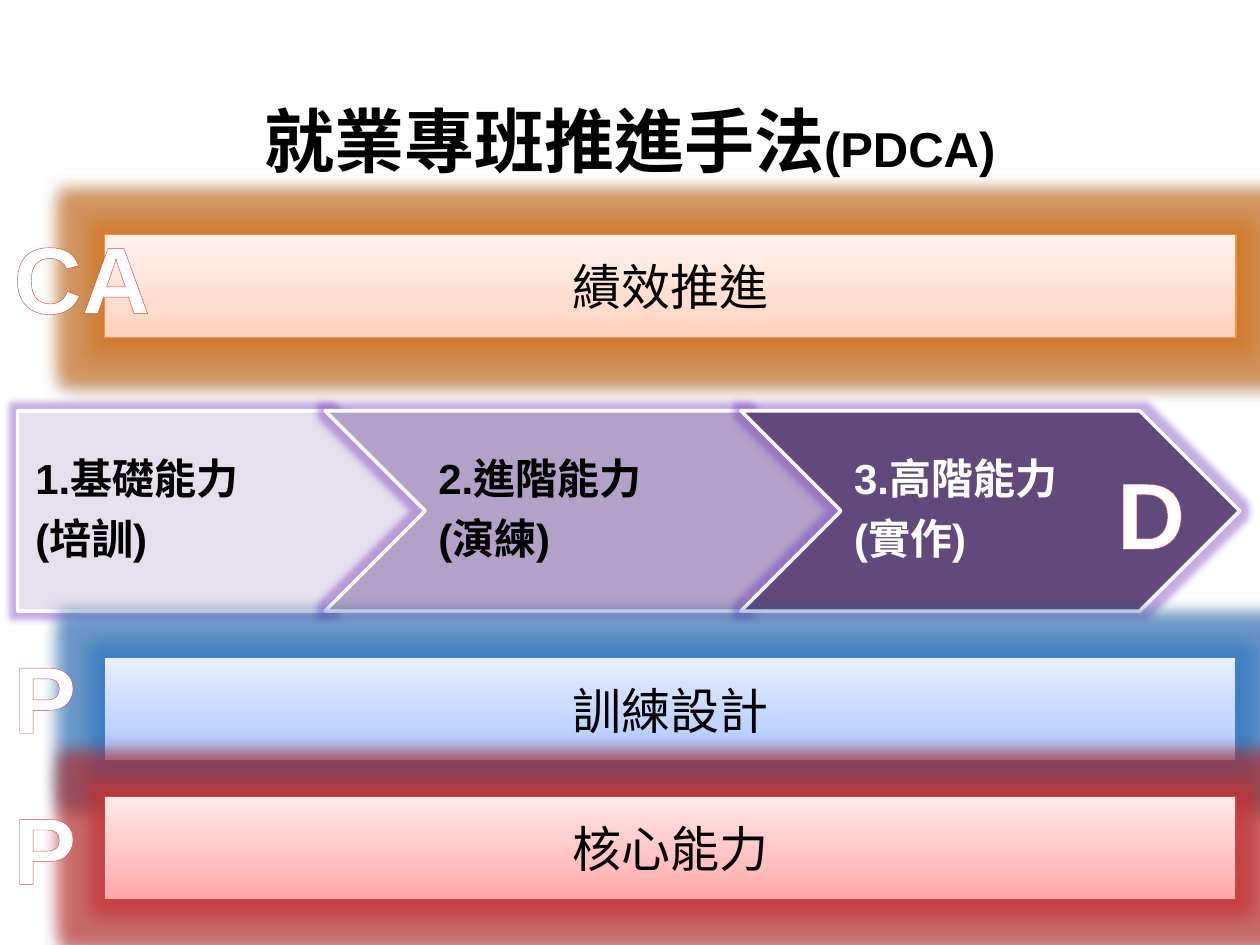
from dataclasses import dataclass

from lxml import etree
from pptx import Presentation
from pptx.dml.color import RGBColor
from pptx.enum.lang import MSO_LANGUAGE_ID
from pptx.enum.shapes import MSO_SHAPE
from pptx.enum.text import MSO_ANCHOR, MSO_AUTO_SIZE, PP_ALIGN
from pptx.oxml import parse_xml
from pptx.oxml.ns import nsdecls, qn
from pptx.util import Inches, Pt

RECT, PENTAGON, CHEVRON = MSO_SHAPE.RECTANGLE, MSO_SHAPE.PENTAGON, MSO_SHAPE.CHEVRON
MIDDLE, CENTER, LEFT = MSO_ANCHOR.MIDDLE, PP_ALIGN.CENTER, PP_ALIGN.LEFT
FIT, NO_FIT = MSO_AUTO_SIZE.SHAPE_TO_FIT_TEXT, MSO_AUTO_SIZE.NONE
ZH_TW = MSO_LANGUAGE_ID.TRADITIONAL_CHINESE
BLACK, WHITE = "000000", "FFFFFF"
STEP_TOP, STEP_H = 3.26, 1.59


@dataclass
class Step:
    shape: MSO_SHAPE
    left: float
    width: float
    text_left: float
    text_width: float
    inset: float
    fill: str
    color: str
    lines: tuple[str, str]


@dataclass
class Bar:
    top: float
    text: str
    stops: tuple[str, str, str]
    line: str
    glow: str


@dataclass
class Letter:
    text: str
    left: float
    top: float
    width: float


STEPS = [
    Step(PENTAGON, 0.14, 3.24, 0.14, 2.84, 0.14, "E6E0EC", BLACK, ("1.基礎能力", "(培訓)")),
    Step(CHEVRON, 2.58, 4.11, 3.38, 2.52, 0.1, "B3A2C7", BLACK, ("2.進階能力", "(演練)")),
    Step(CHEVRON, 5.88, 3.96, 6.68, 2.38, 0.1, "604A7B", WHITE, ("3.高階能力", "(實作)")),
]
BARS = [
    Bar(5.22, "訓練設計", ("A4C4FF", "BFD4FF", "E6EEFF"), "4B7EBC", "2A78C8"),
    Bar(6.32, "核心能力", ("FFA6A5", "FFC0BF", "FFE7E7"), "BF4C48", "CC3030"),
    Bar(1.86, "績效推進", ("FFD2BD", "FFDED0", "FFF2ED"), "F69240", "D9751A"),
]
LETTERS = [
    Letter("P", 0, 6.22, 0.71),
    Letter("P", 0, 5.02, 0.71),
    Letter("D", 8.76, 3.56, 0.75),
    Letter("CA", 0, 1.69, 1.3),
]


def rgb(value: str) -> RGBColor:
    return RGBColor.from_string(value)


def add_run(p, text: str, size: float, color: str, bold: bool = False):
    r = p.add_run()
    r.text = text
    r.font.name = "Arial"
    r.font.size = Pt(size)
    r.font.bold = bold
    r.font.color.rgb = rgb(color)
    r.font.language_id = ZH_TW
    return r


def add_effect(sp, tag: str, color: str, alpha: int, **attrs) -> None:
    """Append an effect to the shape's emptied effect list."""
    effects = sp._element.spPr.find(qn("a:effectLst"))
    effect = etree.SubElement(effects, qn(tag), {k: str(v) for k, v in attrs.items()})
    clr = etree.SubElement(effect, qn("a:srgbClr"), val=color)
    etree.SubElement(clr, qn("a:alpha"), val=str(alpha * 1000))


def add_outlined_shape(s, kind, left: float, top: float, width: float, height: float,
                       line: str, line_width: float):
    sp = s.shapes.add_shape(kind, Inches(left), Inches(top), Inches(width), Inches(height))
    sp.shadow.inherit = False
    sp.line.color.rgb = rgb(line)
    sp.line.width = Pt(line_width)
    return sp


def add_step(s, step: Step) -> None:
    sp = add_outlined_shape(s, step.shape, step.left, STEP_TOP, step.width, STEP_H, WHITE, 2)
    sp.fill.solid()
    sp.fill.fore_color.rgb = rgb(step.fill)
    add_effect(sp, "a:glow", "7030C0", 40, rad=Pt(8))

    tf = s.shapes.add_textbox(Inches(step.text_left), Inches(STEP_TOP),
                              Inches(step.text_width), Inches(STEP_H)).text_frame
    tf.word_wrap = True
    tf.vertical_anchor = MIDDLE
    tf.margin_left, tf.margin_right = Inches(step.inset), Inches(0.04)
    tf.margin_top = tf.margin_bottom = Inches(0.07)
    for i, text in enumerate(step.lines):
        p = tf.add_paragraph() if i else tf.paragraphs[0]
        p.alignment = LEFT
        p.line_spacing = 0.9
        p.space_after = Pt(8.4)
        add_run(p, text, 24, step.color, True)


def add_bar(s, bar: Bar) -> None:
    sp = add_outlined_shape(s, RECT, 0.83, bar.top, 8.98, 0.82, bar.line, 0.75)
    stops = "".join(f'<a:gs pos="{pos * 1000}"><a:srgbClr val="{color}"/></a:gs>'
                    for pos, color in zip((0, 35, 100), bar.stops))
    fill = parse_xml(f'<a:gradFill {nsdecls("a")} rotWithShape="1"><a:gsLst>{stops}</a:gsLst>'
                     '<a:lin ang="16200000" scaled="1"/></a:gradFill>')
    sp._element.spPr.find(qn("a:prstGeom")).addnext(fill)
    add_effect(sp, "a:glow", bar.glow, 60, rad=Pt(18))
    add_effect(sp, "a:outerShdw", BLACK, 38, blurRad=Pt(3.1), dist=Pt(1.6),
               dir=5400000, rotWithShape=0)
    tf = sp.text_frame
    tf.vertical_anchor = MIDDLE
    p = tf.paragraphs[0]
    p.alignment = CENTER
    add_run(p, bar.text, 28, BLACK)


def add_letter(s, letter: Letter) -> None:
    tf = s.shapes.add_textbox(Inches(letter.left), Inches(letter.top),
                              Inches(letter.width), Inches(1.01)).text_frame
    tf.word_wrap = False
    tf.auto_size = FIT
    p = tf.paragraphs[0]
    p.alignment = CENTER
    r = add_run(p, letter.text, 54, WHITE, True)
    outline = parse_xml(f'<a:ln {nsdecls("a")} w="{Pt(0.52)}"><a:solidFill>'
                        '<a:srgbClr val="C0504D"/></a:solidFill></a:ln>')
    r.font._element.insert(0, outline)


def add_title(s) -> None:
    title = s.shapes.title
    title.left, title.top = Inches(0.51), Inches(0.68)
    title.width, title.height = Inches(8.98), Inches(0.86)
    tf = title.text_frame
    tf.auto_size = NO_FIT
    tf.vertical_anchor = MIDDLE
    p = tf.paragraphs[0]
    p.alignment = CENTER
    add_run(p, "就業專班推進手法", 40, BLACK, True)
    add_run(p, "(PDCA)", 28, BLACK, True)


def main() -> None:
    prs = Presentation()
    prs.slide_width, prs.slide_height = Inches(10), Inches(7.5)
    s = prs.slides.add_slide(prs.slide_layouts[5])
    add_title(s)
    # Process arrows, then supporting bars, then PDCA letters on top
    for step in STEPS:
        add_step(s, step)
    for bar in BARS:
        add_bar(s, bar)
    for letter in LETTERS:
        add_letter(s, letter)
    prs.save("out.pptx")


if __name__ == "__main__":
    main()
